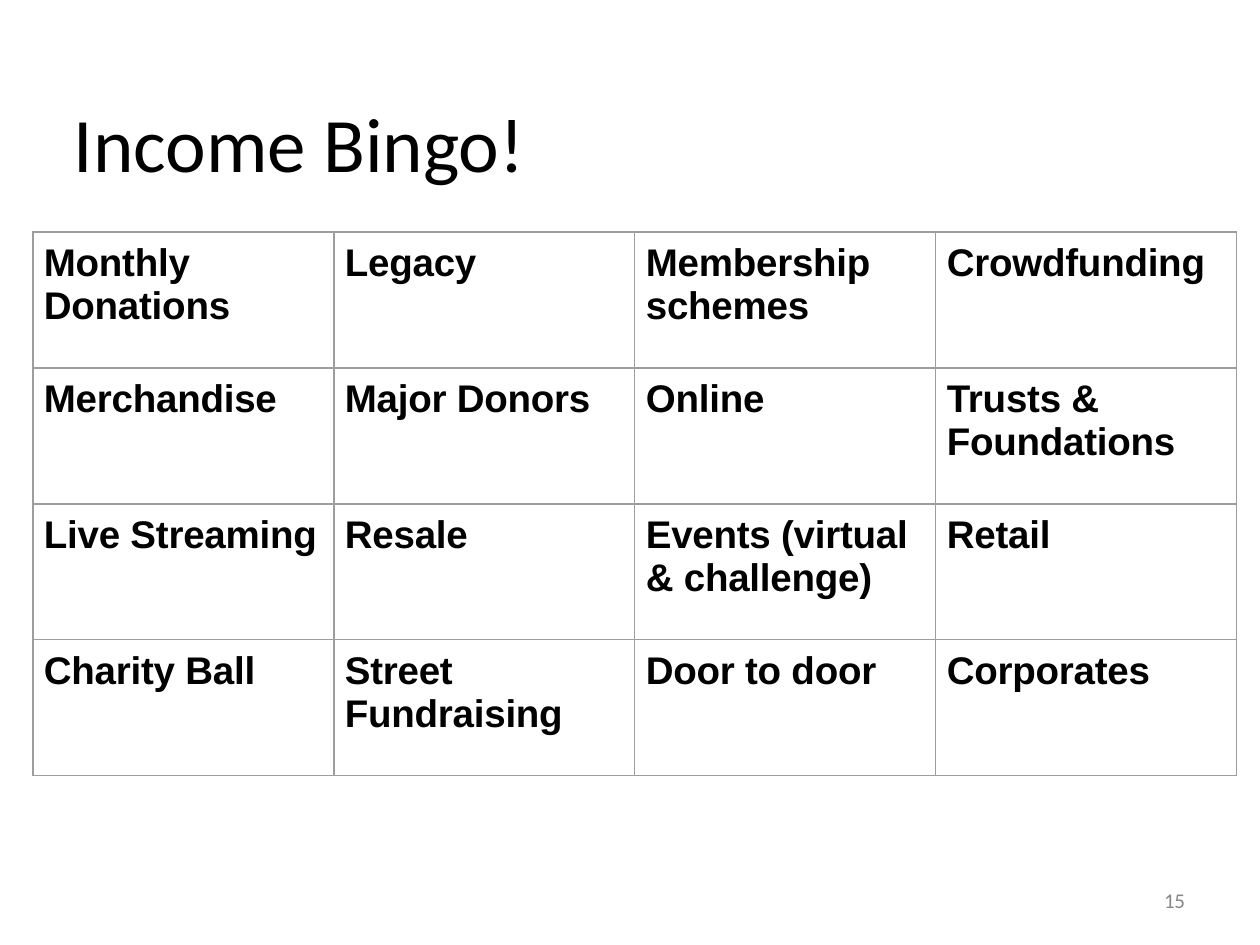
import dataclasses

import pptx
import pptx.dml.color
import pptx.enum.text
import pptx.oxml
import pptx.oxml.ns
import pptx.util


@dataclasses.dataclass(frozen=True)
class Theme:
    ink: str = "000000"
    muted: str = "888888"
    rule: str = "9D9D9D"
    title_size: int = 44
    option_size: int = 22
    number_size: int = 12
    rule_width: float = 0.75


def px(length):
    return pptx.util.Emu(round(length * 914400 / 126))


def apply(target, values):
    for name, value in values.items():
        setattr(target, name, value)


class BingoSlide:
    """Draws styled elements on the current slide."""

    def __init__(self, slide, theme):
        self.slide = slide
        self.theme = theme

    def add_words(self, paragraph, wording, font, size, color, bold=False, spacing=0):
        run = paragraph.add_run()
        run.text = wording
        apply(run.font, {"name": font, "size": pptx.util.Pt(size), "bold": bold})
        run.font.color.rgb = pptx.dml.color.RGBColor.from_string(color)
        run._r.get_or_add_rPr().set("spc", str(spacing))

    def text(self, bounds, pieces, margins, font, size, color, line_spacing=None):
        frame = self.slide.shapes.add_textbox(*map(px, bounds)).text_frame
        left, top = margins
        apply(frame, {
            "margin_left": px(left), "margin_top": px(top),
            "margin_right": 0, "margin_bottom": 0, "word_wrap": True,
            "auto_size": pptx.enum.text.MSO_AUTO_SIZE.SHAPE_TO_FIT_TEXT,
        })
        paragraph = frame.paragraphs[0]
        if line_spacing:
            paragraph.line_spacing = pptx.util.Pt(line_spacing)
        for wording, spacing in pieces:
            self.add_words(paragraph, wording, font, size, color, spacing=spacing)

    def border(self, cell):
        properties = cell._tc.get_or_add_tcPr()
        width = pptx.util.Pt(self.theme.rule_width)
        for position, side in enumerate(("lnL", "lnR", "lnT", "lnB")):
            properties.insert(position, pptx.oxml.parse_xml(
                f'<a:{side} {pptx.oxml.ns.nsdecls("a")} w="{width}"><a:solidFill>'
                f'<a:srgbClr val="{self.theme.rule}"/></a:solidFill></a:{side}>'))

    def grid(self, left, top, column_width, row_height, options):
        rows, columns = len(options), len(options[0])
        bounds = (left, top, columns * column_width, rows * row_height)
        card = self.slide.shapes.add_table(rows, columns, *map(px, bounds)).table
        apply(card, {"first_row": False, "horz_banding": False})
        for column in card.columns:
            column.width = px(column_width)
        for row, row_options in zip(card.rows, options):
            row.height = px(row_height)
            for cell, option in zip(row.cells, row_options):
                apply(cell, {"margin_left": px(11), "margin_top": px(10),
                             "margin_right": 0, "margin_bottom": 0})
                cell.fill.background()
                self.border(cell)
                self.add_words(cell.text_frame.paragraphs[0], option, "Arial",
                               self.theme.option_size, self.theme.ink, True, -10)


def main():
    deck = pptx.Presentation()
    apply(deck, {"slide_width": px(1260), "slide_height": px(945)})
    theme = Theme()
    bingo = BingoSlide(deck.slides.add_slide(deck.slide_layouts[6]), theme)
    income_options = [
        ["Monthly Donations", "Legacy", "Membership schemes", "Crowdfunding"],
        ["Merchandise", "Major Donors", "Online", "Trusts & Foundations"],
        ["Live Streaming", "Resale", "Events (virtual & challenge)", "Retail"],
        ["Charity Ball", "Street Fundraising", "Door to door", "Corporates"],
    ]
    bingo.grid(33, 232, 301, 136, income_options)
    bingo.text((1159, 891, 34, 24), [("15", -20)], (5, 0), "Calibri",
               theme.number_size, theme.muted, line_spacing=12.4)
    bingo.text((73, 94, 1094, 96), [("Income ", 0), ("Bingo!", -10)], (1, 2),
               "Calibri", theme.title_size, theme.ink)
    deck.save("out.pptx")


if __name__ == "__main__":
    main()
